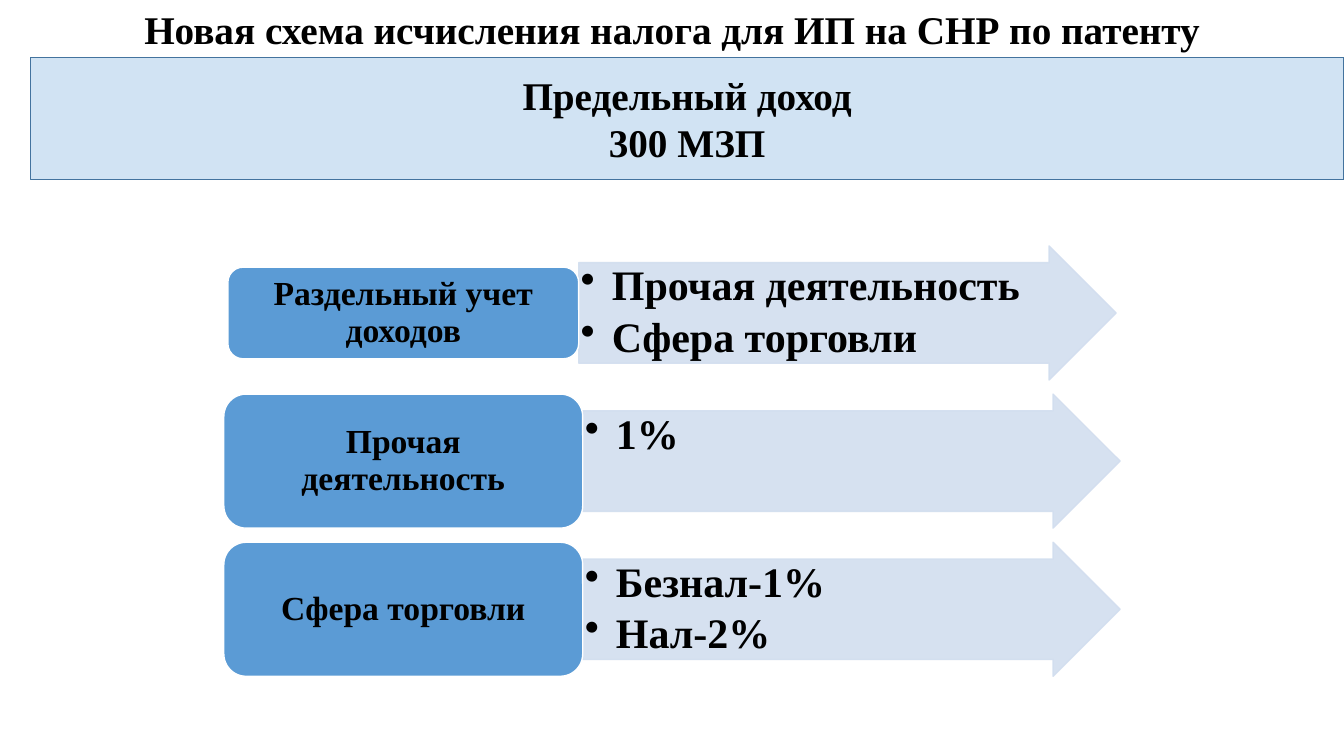
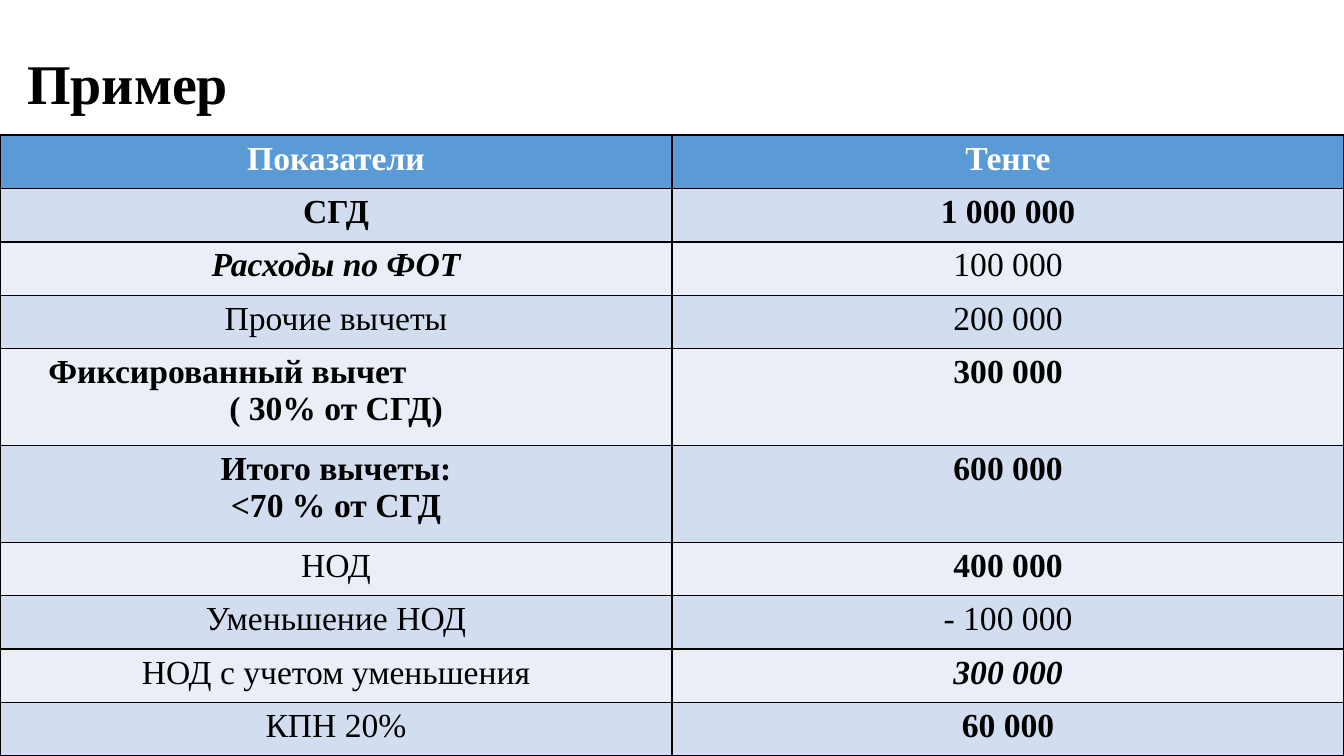
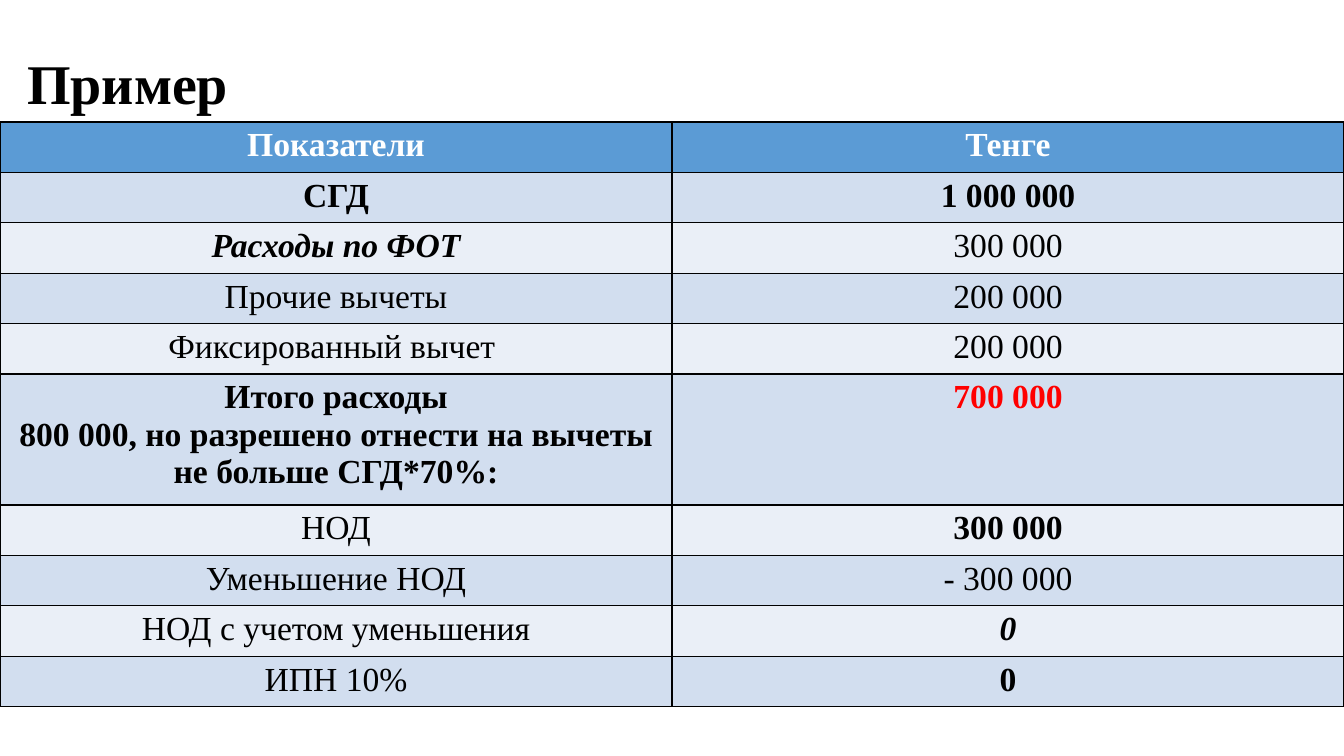
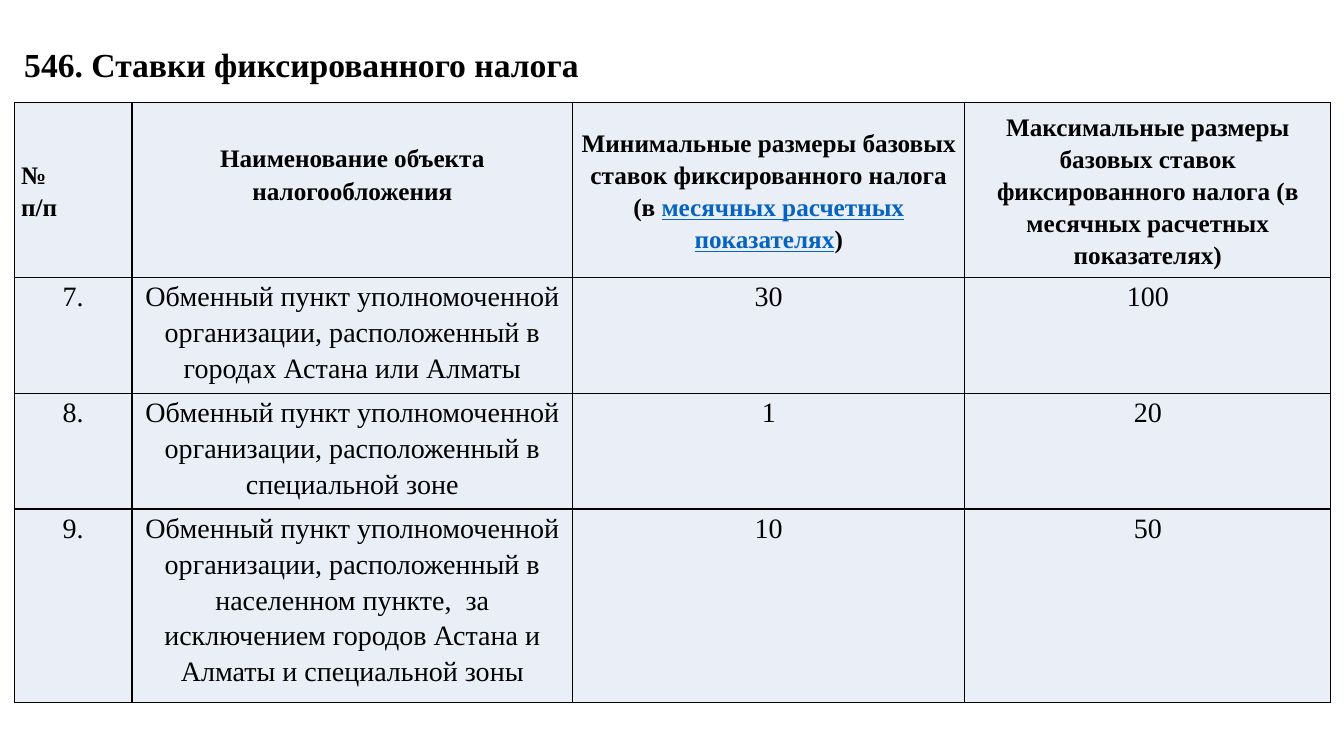
from lxml.etree import SubElement
from pptx import Presentation
from pptx.dml.color import RGBColor
from pptx.enum.shapes import MSO_SHAPE
from pptx.enum.text import MSO_ANCHOR, MSO_AUTO_SIZE, PP_ALIGN
from pptx.oxml.ns import qn
from pptx.util import Inches, Pt

FONT = "Times New Roman"
BLACK = RGBColor(0x00, 0x00, 0x00)
WHITE = RGBColor(0xFF, 0xFF, 0xFF)
RED = RGBColor(0xFF, 0x00, 0x00)
BLUE = RGBColor(0x5B, 0x9B, 0xD5)
DARK_BLUE = RGBColor(0x43, 0x73, 0x9E)
LINK_BLUE = RGBColor(0x05, 0x63, 0xC1)
BAND_DARK = RGBColor(0xD2, 0xDE, 0xEF)
BAND_LIGHT = RGBColor(0xEA, 0xEF, 0xF7)

SLIDE_WIDTH = 13.33
ROW_TOP, ROW_PITCH, ROW_HEIGHT = 2.44, 1.47, 1.33
ARROW_WIDTH = 5.33

# Label, left edge, width and height of the label, arrow points
SCHEME_ROWS = [
    ("Раздельный учет доходов", 2.26, 3.48, 0.91, "Прочая деятельность\nСфера торговли"),
    ("Прочая деятельность", 2.22, 3.56, ROW_HEIGHT, "1%"),
    ("Сфера торговли", 2.22, 3.56, ROW_HEIGHT, "Безнал-1%\nНал-2%"),
]

# Label, its style, amount, its style: b bold, i italic, r red
HEADER_ROWS = [
    ("Показатели", "b", "Тенге", "b"),
    ("СГД", "b", "1 000 000", "b"),
]
COMPANY_ROWS = HEADER_ROWS + [
    ("Расходы по ФОТ", "bi", "100 000", ""),
    ("Прочие вычеты", "", "200 000", ""),
    ("Фиксированный вычет\n( 30% от СГД)", "b", "300 000", "b"),
    ("Итого вычеты:\n<70 % от СГД", "b", "600 000", "b"),
    ("НОД", "", "400 000", "b"),
    ("Уменьшение НОД", "", "- 100 000", ""),
    ("НОД с учетом уменьшения", "", "300 000", "bi"),
    ("КПН 20%", "", "60 000", "b"),
]
PERSON_ROWS = HEADER_ROWS + [
    ("Расходы по ФОТ", "bi", "300 000", ""),
    ("Прочие вычеты", "", "200 000", ""),
    ("Фиксированный вычет ", "", "200 000", ""),
    ("Итого расходы\n800 000, но разрешено отнести на вычеты не больше СГД*70%:", "b",
     "700 000", "br"),
    ("НОД", "", "300 000", "b"),
    ("Уменьшение НОД", "", "- 300 000", ""),
    ("НОД с учетом уменьшения", "", "0", "bi"),
    ("ИПН 10%", "", "0", "b"),
]

RATE_WIDTHS = [1.17, 4.37, 3.89, 3.63]
RATE_HEADER = [
    "№\nп/п",
    "Наименование объекта налогообложения",
    "Минимальные размеры базовых ставок фиксированного налога (в ",
    "Максимальные размеры базовых ставок фиксированного налога "
    "(в месячных расчетных показателях)",
]
EXCHANGE_OFFICE = "Обменный пункт уполномоченной организации, расположенный в "
RATE_ROWS = [
    ["7.", EXCHANGE_OFFICE + "городах Астана или Алматы", "30", "100"],
    ["8.", EXCHANGE_OFFICE + "специальной зоне", "1", "20"],
    ["9.", EXCHANGE_OFFICE + "населенном пункте,  за исключением городов Астана и Алматы "
     "и специальной зоны", "10", "50"],
]


def format_text(text_frame, size, bold=True, italic=False, color=BLACK,
                align=PP_ALIGN.CENTER, spacing=1.0):
    for paragraph in text_frame.paragraphs:
        paragraph.alignment = align
        paragraph.line_spacing = spacing
        for run in paragraph.runs:
            font = run.font
            font.name, font.size = FONT, Pt(size)
            font.bold, font.italic = bold, italic
            font.color.rgb = color


def set_margins(target, horizontal, vertical):
    target.margin_left = target.margin_right = Inches(horizontal)
    target.margin_top = target.margin_bottom = Inches(vertical)


def add_titled_slide(presentation, title, left, top, width, height, size,
                     align=PP_ALIGN.LEFT):
    slide = presentation.slides.add_slide(presentation.slide_layouts[5])
    shape = slide.shapes.title
    shape.left, shape.top = Inches(left), Inches(top)
    shape.width, shape.height = Inches(width), Inches(height)
    text_frame = shape.text_frame
    text_frame.text = title
    text_frame.word_wrap = True
    text_frame.auto_size = MSO_AUTO_SIZE.NONE
    text_frame.vertical_anchor = MSO_ANCHOR.TOP
    format_text(text_frame, size, align=align)
    return slide


def add_block(slide, kind, left, top, width, height, fill, line, text):
    shape = slide.shapes.add_shape(kind, Inches(left), Inches(top),
                                   Inches(width), Inches(height))
    shape.shadow.inherit = False
    shape.fill.solid()
    shape.fill.fore_color.rgb = fill
    shape.line.color.rgb = line
    shape.line.width = Pt(1)
    shape.text_frame.text = text
    shape.text_frame.word_wrap = True
    shape.text_frame.vertical_anchor = MSO_ANCHOR.MIDDLE
    return shape


def set_opacity(fill_parent, percent):
    color = fill_parent.find(qn("a:solidFill")).find(qn("a:srgbClr"))
    SubElement(color, qn("a:alpha"), val=str(percent * 1000))


def add_bullets(text_frame, indent):
    for paragraph in text_frame.paragraphs:
        paragraph.space_after = Pt(4.5)
        properties = paragraph._p.get_or_add_pPr()
        properties.set("marL", str(Inches(indent)))
        properties.set("indent", str(-Inches(indent)))
        SubElement(properties, qn("a:buChar"), char="•")


def add_scheme_row(slide, top, label, left, width, height, points):
    """Draw a label and, to its right, an arrow with bulleted points."""
    arrow = add_block(slide, MSO_SHAPE.RIGHT_ARROW, left + width, top, ARROW_WIDTH,
                      ROW_HEIGHT, BAND_DARK, BAND_DARK, points)
    arrow.adjustments[0], arrow.adjustments[1] = 0.75, 0.5
    properties = arrow.element.spPr
    set_opacity(properties, 90)
    set_opacity(properties.find(qn("a:ln")), 90)
    set_margins(arrow.text_frame, 0.02, 0.02)
    arrow.text_frame.vertical_anchor = MSO_ANCHOR.TOP
    format_text(arrow.text_frame, 30, align=PP_ALIGN.LEFT, spacing=0.9)
    add_bullets(arrow.text_frame, 0.31)

    box = add_block(slide, MSO_SHAPE.ROUNDED_RECTANGLE, left,
                    top + (ROW_HEIGHT - height) / 2, width, height, BLUE, WHITE, label)
    format_text(box.text_frame, 24, spacing=0.9)


def add_borders(cell):
    properties = cell._tc.get_or_add_tcPr()
    for side in ("lnL", "lnR", "lnT", "lnB"):
        line = SubElement(properties, qn("a:" + side), w=str(Pt(1)))
        SubElement(SubElement(line, qn("a:solidFill")), qn("a:srgbClr"), val=str(BLACK))


def add_grid(slide, left, top, widths, heights, rows, fills):
    """Add a bordered table; fills gives one colour for each row."""
    table = slide.shapes.add_table(len(heights), len(widths), Inches(left), Inches(top),
                                   Inches(sum(widths)), Inches(sum(heights))).table
    for column, width in zip(table.columns, widths):
        column.width = Inches(width)
    for row, height, texts, fill in zip(table.rows, heights, rows, fills):
        row.height = Inches(height)
        for cell, text in zip(row.cells, texts):
            add_borders(cell)
            cell.fill.solid()
            cell.fill.fore_color.rgb = fill
            cell.text_frame.text = text
    return table


def add_example_slide(presentation, top, heights, rows):
    slide = add_titled_slide(presentation, "Пример", 0.17, 0.43, 13, 0.77, 40)
    fills = [BLUE] + [BAND_LIGHT if index % 2 else BAND_DARK
                      for index in range(len(rows) - 1)]
    table = add_grid(slide, 0, top, [SLIDE_WIDTH / 2] * 2, heights,
                     [(label, amount) for label, _, amount, _ in rows], fills)
    for index, (_, label_style, _, amount_style) in enumerate(rows):
        for cell, style in zip(table.rows[index].cells, (label_style, amount_style)):
            color = WHITE if index == 0 else RED if "r" in style else BLACK
            format_text(cell.text_frame, 24, "b" in style, "i" in style, color)
    return table


def add_scheme_slide(presentation):
    slide = add_titled_slide(presentation,
                             "Новая схема исчисления налога для ИП на СНР по патенту",
                             0, 0, SLIDE_WIDTH, 0.57, 28, PP_ALIGN.CENTER)
    limit = add_block(slide, MSO_SHAPE.RECTANGLE, 0.3, 0.57, 13.03, 1.21, BLUE, DARK_BLUE,
                      "Предельный доход\n300 МЗП")
    set_opacity(limit.element.spPr, 28)
    format_text(limit.text_frame, 28)
    for index, row in enumerate(SCHEME_ROWS):
        add_scheme_row(slide, ROW_TOP + index * ROW_PITCH, *row)


def add_rates_slide(presentation):
    slide = add_titled_slide(presentation, "546. Ставки фиксированного налога",
                             0.14, 0.39, 13.07, 0.91, 24)
    header = add_grid(slide, 0.14, 1.02, RATE_WIDTHS, [1.73], [RATE_HEADER], [BAND_LIGHT])
    number, name, minimum, _ = header.rows[0].cells
    paragraph = minimum.text_frame.paragraphs[0]
    term, closing = paragraph.add_run(), paragraph.add_run()
    term.text, closing.text = "месячных расчетных показателях", ")"
    for cell in header.iter_cells():
        set_margins(cell, 0.07, 0)
        cell.vertical_anchor = MSO_ANCHOR.MIDDLE
        format_text(cell.text_frame, 18, spacing=1.15)
    term.font.color.rgb = LINK_BLUE
    term.font.underline = True
    for paragraph in number.text_frame.paragraphs:
        paragraph.alignment = PP_ALIGN.JUSTIFY
    name.margin_bottom = Inches(0.33)

    rates = add_grid(slide, 0.14, 2.75, RATE_WIDTHS, [1.15, 1.15, 1.92], RATE_ROWS,
                     [BAND_LIGHT] * 3)
    for cell in rates.iter_cells():
        set_margins(cell, 0.07, 0)
        format_text(cell.text_frame, 20, bold=False, spacing=1.15)


def main():
    presentation = Presentation()
    presentation.slide_width = Inches(SLIDE_WIDTH)
    presentation.slide_height = Inches(7.5)

    add_scheme_slide(presentation)
    company = add_example_slide(presentation, 1.34,
                                [0.53] * 4 + [0.96] * 2 + [0.53] * 4, COMPANY_ROWS)
    deduction = company.cell(4, 0).text_frame.paragraphs[0]
    deduction.alignment = PP_ALIGN.LEFT
    deduction._p.get_or_add_pPr().set("marL", str(Inches(0.38)))
    add_example_slide(presentation, 1.21, [0.5] * 5 + [1.3] + [0.5] * 4, PERSON_ROWS)
    add_rates_slide(presentation)

    presentation.save("out.pptx")


if __name__ == "__main__":
    main()
